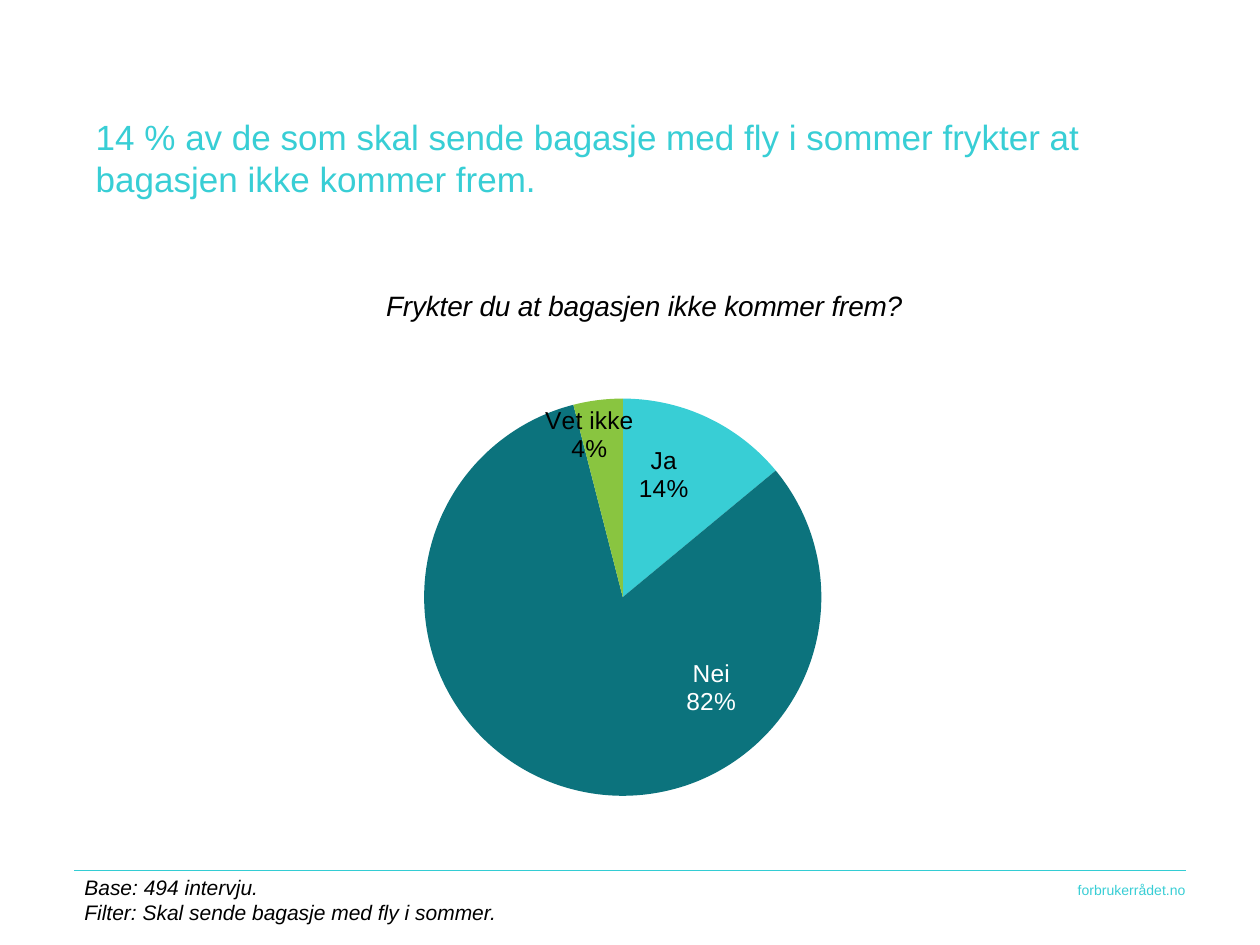
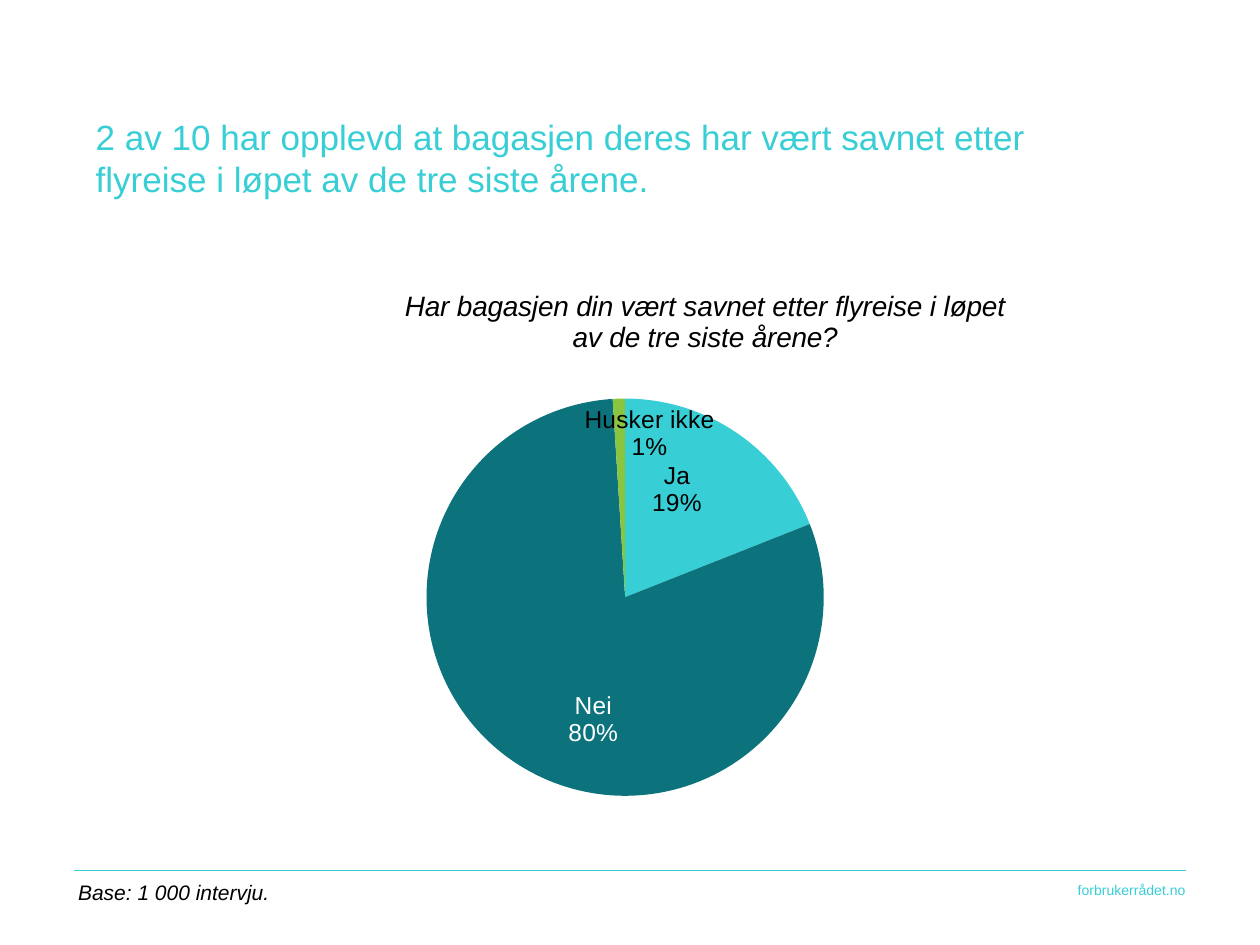
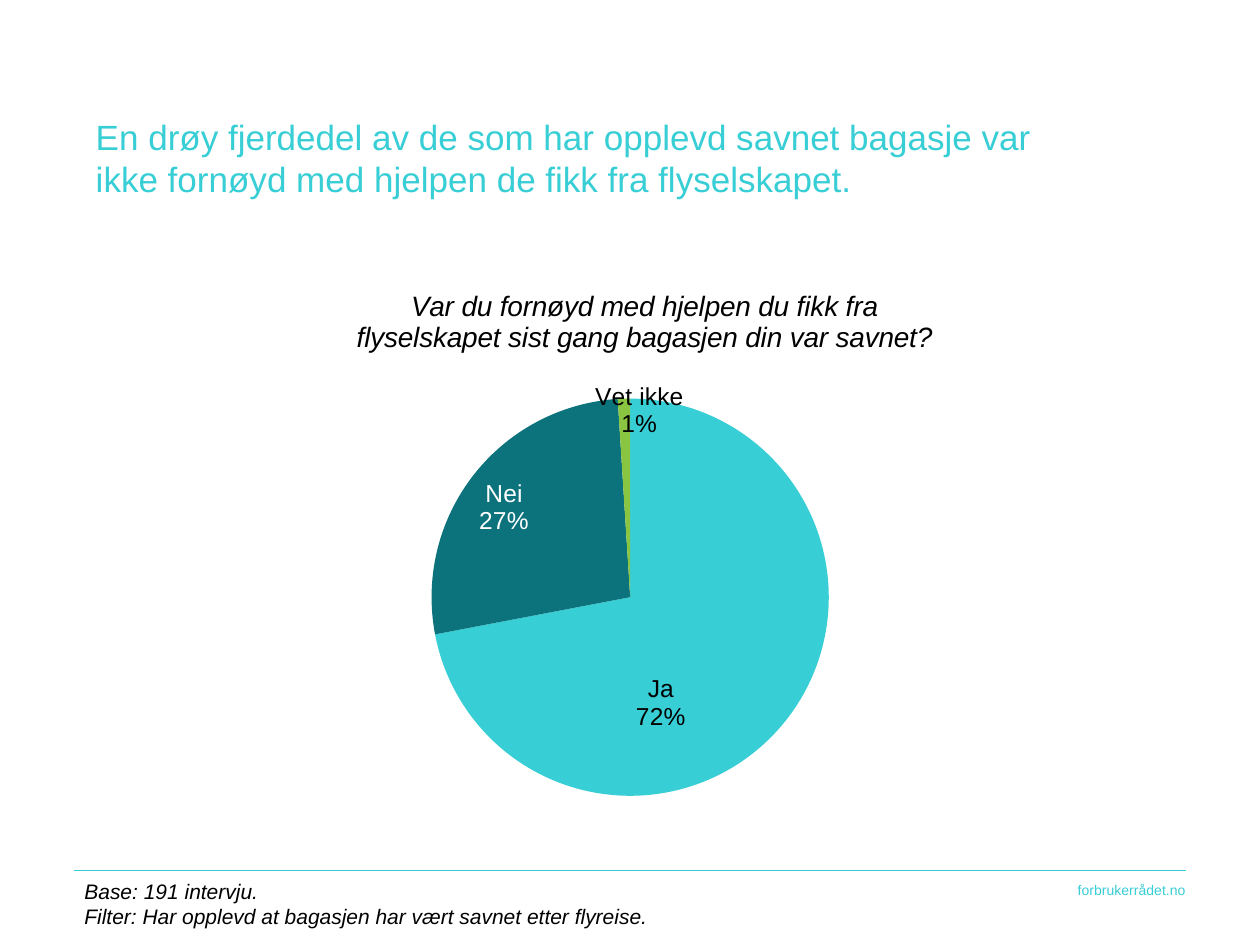
from lxml.etree import SubElement
from pptx import Presentation
from pptx.chart.data import CategoryChartData
from pptx.dml.color import RGBColor
from pptx.enum.chart import XL_CHART_TYPE, XL_LABEL_POSITION
from pptx.enum.shapes import MSO_CONNECTOR
from pptx.enum.text import MSO_ANCHOR, PP_ALIGN
from pptx.oxml.ns import qn
from pptx.util import Inches, Pt

COLS, ROWS = 100, 75
AQUA, TEAL, LIME = "38CED5", "0C737D", "89C540"
RULE, BLACK, WHITE = "33CDD4", "000000", "FFFFFF"

SLIDES = [
    dict(
        head="14 % av de som skal sende bagasje med fly i sommer frykter at bagasjen ikke kommer frem.",
        ask="Frykter du at bagasjen ikke kommer frem?",
        spot=(0.05, 0),
        frame=(27.2, 22.5, 60.9, 45.7),
        names=["Ja", "Nei", "Vet ikke"],
        vals=[14, 82, 4],
        moves=[(-0.02, 0.04), (0.16, -0.11), (-0.07, 0)],
        note=["Base: 494 intervju.", "Filter: Skal sende bagasje med fly i sommer."],
        base=(6.7, 69.4, 45.7, 4),
    ),
    dict(
        head="2 av 10 har opplevd at bagasjen deres har vært savnet etter flyreise i løpet av de tre siste årene.",
        ask="Har bagasjen din vært savnet etter flyreise i løpet av de tre siste årene?",
        spot=(0.07, 0),
        frame=(27.5, 22.5, 60.6, 45.7),
        names=["Ja", "Nei", "Husker ikke"],
        vals=[19, 80, 1],
        moves=[(-0.04, 0.04), (0.06, -0.02), (0.04, 0)],
        note=["Base: 1 000 intervju."],
        base=(6.2, 69.8, 41.4, 2),
    ),
    dict(
        head="En drøy fjerdedel av de som har opplevd savnet bagasje var ikke fornøyd med hjelpen de fikk fra flyselskapet.",
        ask="Var du fornøyd med hjelpen du fikk fra flyselskapet sist gang bagasjen din var savnet?",
        spot=(0, 0),
        frame=(27.9, 22.5, 60.6, 45.7),
        names=["Ja", "Nei", "Vet ikke"],
        vals=[72, 27, 1],
        moves=[(-0.12, 0.02), (0, 0), (0.02, -0.04)],
        note=["Base: 191 intervju.", "Filter: Har opplevd at bagasjen har vært savnet etter flyreise."],
        base=(6.7, 69.7, 45.7, 4),
    ),
]


def paint(code):
    return RGBColor.from_string(code)


def lay(node, spot, **modes):
    for old in node.findall(qn("c:layout")):
        node.remove(old)
    box = SubElement(node, qn("c:layout"))
    form = SubElement(box, qn("c:manualLayout"))
    sizes = dict(zip("xywh", spot))
    for name, val in {**modes, **sizes}.items():
        SubElement(form, qn("c:" + name)).set("val", str(val))
    return box


def show(node):
    for tag in ("c:showCatName", "c:showPercent", "c:showVal"):
        node.find(qn(tag)).set("val", "0" if tag == "c:showVal" else "1")
    gap = SubElement(node, qn("c:separator"))
    gap.text = "\n"
    node.find(qn("c:showBubbleSize")).addnext(gap)


class Deck:
    def __init__(self):
        self.file = Presentation()
        self.unit = Inches(10) / COLS
        self.file.slide_width = self.size(COLS)
        self.file.slide_height = self.size(ROWS)
        self.face = "Arial"

    def size(self, count):
        return round(count * self.unit)

    def place(self, area):
        return [self.size(part) for part in area]

    def style(self, font, points, code, slant=False):
        font.name = self.face
        font.size = Pt(points)
        font.bold = False
        font.italic = slant
        font.color.rgb = paint(code)

    def page(self):
        self.slide = self.file.slides.add_slide(self.file.slide_layouts[6])
        self.rule((5.9, 69.1, 94.1, 69.1))
        self.text(["forbrukerrådet.no"], (65, 69.5, 29.1, 2.4), 8, AQUA,
                  align=PP_ALIGN.RIGHT, pad=0.5)

    def rule(self, ends):
        line = self.slide.shapes.add_connector(MSO_CONNECTOR.STRAIGHT, *self.place(ends))
        line.line.color.rgb = paint(RULE)
        line.line.width = Pt(0.92)
        SubElement(line._element.spPr, qn("a:effectLst"))

    def text(self, lines, area, points, code, slant=False, align=PP_ALIGN.LEFT,
             anchor=MSO_ANCHOR.TOP, pad=0):
        frame = self.slide.shapes.add_textbox(*self.place(area)).text_frame
        frame.word_wrap = True
        frame.vertical_anchor = anchor
        frame.margin_left = frame.margin_right = 0
        frame.margin_top = frame.margin_bottom = self.size(pad)
        frame.text = "\n".join(lines)
        for para in frame.paragraphs:
            para.alignment = align
            for run in para.runs:
                self.style(run.font, points, code, slant)

    def pie(self, ask, spot, frame, names, vals, moves):
        data = CategoryChartData()
        data.categories = names
        data.add_series("Series 1", vals)
        chart = self.slide.shapes.add_chart(
            XL_CHART_TYPE.PIE, *self.place(frame), data).chart
        self.style(chart.font, 18, BLACK)
        chart.has_legend = False
        self.label(chart, ask, spot)
        area = chart._chartSpace.chart.plotArea
        area.insert(0, lay(area, (0.075, 0.2, 0.58, 0.69),
                           layoutTarget="inner", xMode="edge", yMode="edge"))
        plot = chart.plots[0]
        plot.vary_by_categories = True
        series = plot.series[0]
        for index, code in enumerate((AQUA, TEAL, LIME)):
            point = series.points[index]
            point.format.fill.solid()
            point.format.fill.fore_color.rgb = paint(code)
            point.format.line.fill.background()
            tag = point.data_label
            self.style(tag.font, 14, WHITE if code == TEAL else BLACK)
            tag.position = XL_LABEL_POSITION.INSIDE_END
        tags = series.data_labels
        self.style(tags.font, 14, WHITE)
        tags.number_format = "0%"
        tags.number_format_is_linked = False
        tags.position = XL_LABEL_POSITION.INSIDE_END
        tags.show_value = False
        tags.show_category_name = tags.show_percentage = True
        for node, move in zip(area.iter(qn("c:dLbl")), moves):
            show(node)
            if any(move):
                node.find(qn("c:idx")).addnext(lay(node, move))

    def label(self, chart, ask, spot):
        chart.has_title = True
        title = chart.chart_title
        title.include_in_layout = False
        title.text_frame.text = ask
        for run in title.text_frame.paragraphs[0].runs:
            self.style(run.font, 16, BLACK, True)
        node = title._element
        node.find(qn("c:tx")).addnext(lay(node, spot, xMode="edge", yMode="edge"))


def main():
    deck = Deck()
    for item in SLIDES:
        deck.page()
        deck.text([item["head"]], (7.6, 9.2, 79.5, 6.7), 20, AQUA)
        deck.pie(*(item[key] for key in ("ask", "spot", "frame", "names", "vals", "moves")))
        deck.text(item["note"], item["base"], 12, BLACK, slant=True,
                  anchor=MSO_ANCHOR.BOTTOM)
    deck.file.save("out.pptx")


if __name__ == "__main__":
    main()
